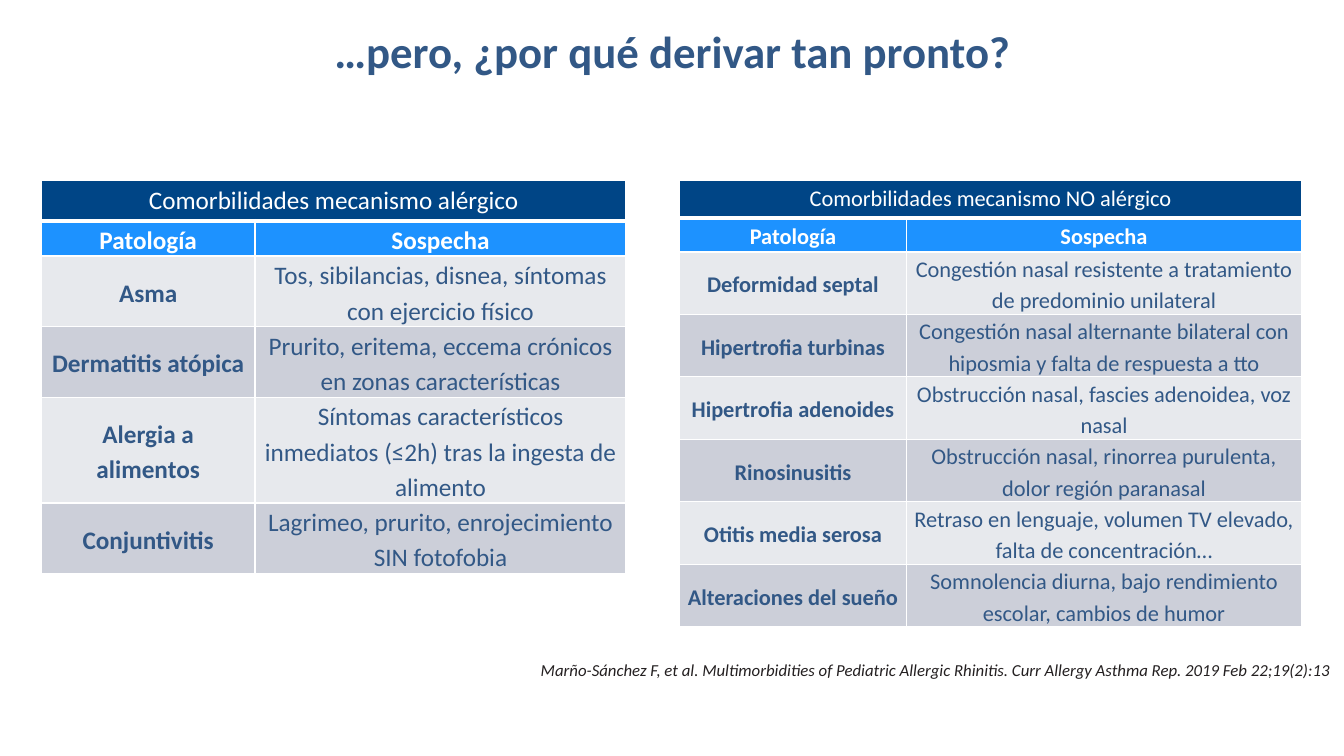
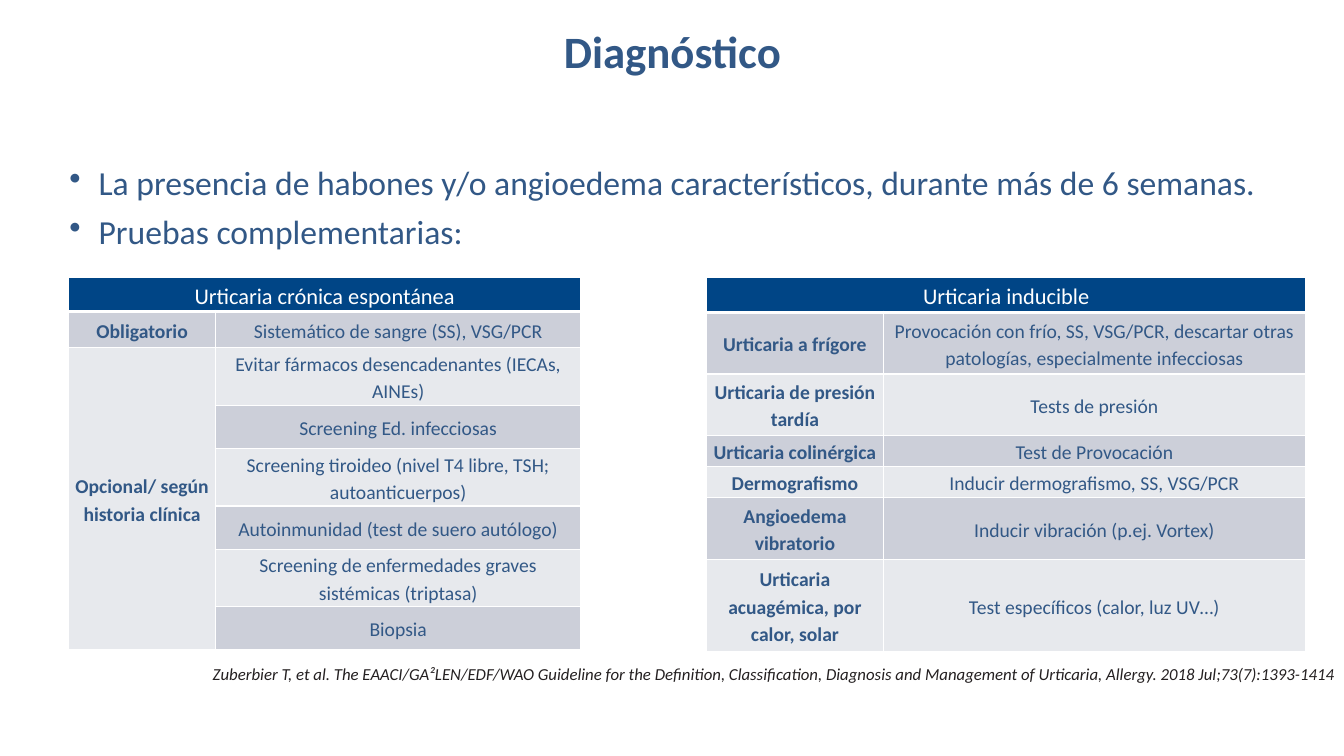
from dataclasses import dataclass

from lxml import etree
from pptx import Presentation
from pptx.dml.color import RGBColor
from pptx.enum import text
from pptx.oxml import ns
from pptx.util import Inches, Pt


# Shared look
@dataclass(frozen=True)
class Theme:
    font: str = "Calibri"
    ink: str = "325886"
    white: str = "FFFFFF"
    citation: str = "242021"
    header: str = "004586"
    subheader: str = "1D92FF"
    light: str = "E7E9ED"
    dark: str = "CCCFD9"
    title_size: int = 32
    bullet_size: int = 24
    citation_size: int = 12
    line_spacing: float = 1.15


THEME = Theme()
ALIGN = text.PP_ALIGN
MIDDLE = text.MSO_ANCHOR.MIDDLE


@dataclass
class TableSpec:
    """Rows are (height, label, detail); an empty label extends the one above."""
    left: float
    top: float
    columns: tuple
    title: str
    title_height: float
    title_size: int
    rows: list
    body_size: int
    subheader_height: float = 0
    label_inset: float = 0.07
    title_spacing: float = THEME.line_spacing


def apply(target, formats):
    for name, value in formats.items():
        setattr(target, name, value)


def write(paragraph, words, size, color, formats=None, **font_formats):
    paragraph.text = words
    apply(paragraph, formats or {})
    apply(paragraph.font, {"name": THEME.font, "size": Pt(size), **font_formats})
    paragraph.font.color.rgb = RGBColor.from_string(color)


# Text parts
def add_text_frame(slide, left, top, width, height, **formats):
    box = slide.shapes.add_textbox(*map(Inches, (left, top, width, height)))
    apply(box.text_frame, {"word_wrap": True, **formats})
    return box.text_frame


def add_title(slide, words):
    frame = add_text_frame(slide, 0.67, 0.17, 12, 0.66, vertical_anchor=MIDDLE)
    write(frame.paragraphs[0], words, THEME.title_size, THEME.ink,
          {"alignment": ALIGN.CENTER}, bold=True)


def add_citation(slide, left, top, words):
    frame = add_text_frame(slide, left, top, 12.67, 0.32)
    write(frame.paragraphs[0], words, THEME.citation_size, THEME.citation,
          {"alignment": ALIGN.RIGHT}, italic=True)


def add_bullets(slide, items):
    frame = add_text_frame(slide, 0, 1.56, 12.67, 0.95)
    for index, item in enumerate(items):
        paragraph = frame.add_paragraph() if index else frame.paragraphs[0]
        properties = paragraph._p.get_or_add_pPr()
        properties.set("marL", str(Inches(0.88)))
        properties.set("indent", str(-Inches(0.29)))
        bullet = etree.SubElement(properties, ns.qn("a:buChar"))
        bullet.set("char", "•")
        write(paragraph, item, THEME.bullet_size, THEME.ink,
              {"space_before": Pt(6)} if index else None)


# Table parts
def set_borders(cell, bottom=1):
    properties = cell._tc.get_or_add_tcPr()
    for side, width in (("L", 1), ("R", 1), ("T", 1), ("B", bottom)):
        line = etree.SubElement(properties, ns.qn(f"a:ln{side}"), w=str(Pt(width)))
        fill = etree.SubElement(line, ns.qn("a:solidFill"))
        etree.SubElement(fill, ns.qn("a:srgbClr"), val=THEME.white)


def fill_cell(cell, words, fill, size, color, bold=False, inset=0.07,
              bottom=1, spacing=THEME.line_spacing):
    set_borders(cell, bottom)
    cell.fill.solid()
    cell.fill.fore_color.rgb = RGBColor.from_string(fill)
    apply(cell, {"margin_left": Inches(inset), "margin_right": Inches(inset),
                 "margin_top": 0, "margin_bottom": 0, "vertical_anchor": MIDDLE})
    write(cell.text_frame.paragraphs[0], words, size, color,
          {"alignment": ALIGN.CENTER, "line_spacing": spacing,
           "space_after": Pt(10)}, bold=bold)


def add_table(slide, spec):
    heights = [spec.title_height]
    if spec.subheader_height:
        heights.append(spec.subheader_height)
    first_body = len(heights)
    heights += [height for height, _, _ in spec.rows]
    table = slide.shapes.add_table(
        len(heights), 2, Inches(spec.left), Inches(spec.top),
        Inches(sum(spec.columns)), Inches(sum(heights))).table
    apply(table, {"first_row": False, "horz_banding": False})
    for column, width in zip(table.columns, spec.columns):
        column.width = Inches(width)
    for row, height in zip(table.rows, heights):
        row.height = Inches(height)

    # Heading rows
    for column, words in enumerate((spec.title, "")):
        fill_cell(table.cell(0, column), words, THEME.header, spec.title_size,
                  THEME.white, bottom=3, spacing=spec.title_spacing)
    table.cell(0, 0).merge(table.cell(0, 1))
    if spec.subheader_height:
        for column, words in enumerate(("Patología", "Sospecha")):
            fill_cell(table.cell(1, column), words, THEME.subheader,
                      spec.body_size, THEME.white, bold=True)

    # Body rows, banded by row number
    label_rows = []
    for number, (_, label, detail) in enumerate(spec.rows, first_body):
        fill = THEME.dark if number % 2 else THEME.light
        fill_cell(table.cell(number, 0), label, fill, spec.body_size,
                  THEME.ink, bold=True, inset=spec.label_inset)
        fill_cell(table.cell(number, 1), detail, fill, spec.body_size, THEME.ink)
        if label:
            label_rows.append(number)
    for start, following in zip(label_rows, label_rows[1:] + [len(heights)]):
        if following - start > 1:
            table.cell(start, 0).merge(table.cell(following - 1, 0))


# Slides
def build_referral(slide):
    add_title(slide, "…pero, ¿por qué derivar tan pronto?")
    add_citation(slide, 0.63, 6.5, "Marño-Sánchez F, et al. Multimorbidities of Pediatric "
                 "Allergic Rhinitis. Curr Allergy Asthma Rep. 2019 Feb 22;19(2):13")
    add_table(slide, TableSpec(
        0.41, 1.79, (2.12, 3.68), "Comorbilidades mecanismo alérgico", 0.4, 18, [
            (0.7, "Asma", "Tos, sibilancias, disnea, síntomas con ejercicio físico"),
            (0.7, "Dermatitis atópica",
             "Prurito, eritema, eccema crónicos en zonas características"),
            (1.05, "Alergia a alimentos",
             "Síntomas característicos inmediatos (≤2h) tras la ingesta de alimento"),
            (0.7, "Conjuntivitis", "Lagrimeo, prurito, enrojecimiento SIN fotofobia"),
        ], 18, subheader_height=0.35, title_spacing=1.0))
    non_allergic = {
        "Deformidad septal":
            "Congestión nasal resistente a tratamiento de predominio unilateral",
        "Hipertrofia turbinas":
            "Congestión nasal alternante bilateral con hiposmia y falta de respuesta a tto",
        "Hipertrofia adenoides": "Obstrucción nasal, fascies adenoidea, voz nasal",
        "Rinosinusitis": "Obstrucción nasal, rinorrea purulenta, dolor región paranasal",
        "Otitis media serosa":
            "Retraso en lenguaje, volumen TV elevado, falta de concentración…",
        "Alteraciones del sueño":
            "Somnolencia diurna, bajo rendimiento escolar, cambios de humor",
    }
    add_table(slide, TableSpec(
        6.74, 1.79, (2.25, 3.92), "Comorbilidades mecanismo NO alérgico", 0.37, 16,
        [(0.62, label, detail) for label, detail in non_allergic.items()],
        16, subheader_height=0.34, title_spacing=1.0))


def build_diagnosis(slide):
    add_title(slide, "Diagnóstico")
    add_bullets(slide, (
        "La presencia de habones y/o angioedema característicos, durante más de 6 semanas.",
        "Pruebas complementarias:"))
    add_citation(slide, 0.68, 6.54, "Zuberbier T, et al. The EAACI/GA²LEN/EDF/WAO Guideline "
                 "for the Definition, Classification, Diagnosis and Management of Urticaria, "
                 "Allergy. 2018 Jul;73(7):1393-1414")
    add_table(slide, TableSpec(
        0.68, 2.75, (1.46, 3.62), "Urticaria crónica espontánea", 0.34, 16, [
            (0.36, "Obligatorio", "Sistemático de sangre (SS), VSG/PCR"),
            (0.57, "Opcional/ según historia clínica",
             "Evitar fármacos desencadenantes (IECAs, AINEs)"),
            (0.43, "", "Screening Ed. infecciosas"),
            (0.57, "", "Screening tiroideo (nivel T4 libre, TSH; autoanticuerpos)"),
            (0.43, "", "Autoinmunidad (test de suero autólogo)"),
            (0.57, "", "Screening de enfermedades graves sistémicas (triptasa)"),
            (0.43, "", "Biopsia"),
        ], 14, label_inset=0.02))
    add_table(slide, TableSpec(
        7.01, 2.75, (1.75, 4.19), "Urticaria inducible", 0.35, 16, [
            (0.61, "Urticaria a frígore", "Provocación con frío, SS, VSG/PCR, "
             "descartar otras patologías, especialmente infecciosas"),
            (0.61, "Urticaria de presión tardía", "Tests de presión"),
            (0.31, "Urticaria colinérgica", "Test de Provocación"),
            (0.31, "Dermografismo", "Inducir dermografismo, SS, VSG/PCR"),
            (0.61, "Angioedema vibratorio", "Inducir vibración (p.ej. Vortex)"),
            (0.92, "Urticaria acuagémica, por calor, solar",
             "Test específicos (calor, luz UV…)"),
        ], 14, label_inset=0.02))


def main():
    presentation = Presentation()
    apply(presentation, {"slide_width": Inches(13.33), "slide_height": Inches(7.5)})
    for build in (build_referral, build_diagnosis):
        build(presentation.slides.add_slide(presentation.slide_layouts[6]))
    presentation.save("out.pptx")


if __name__ == "__main__":
    main()
